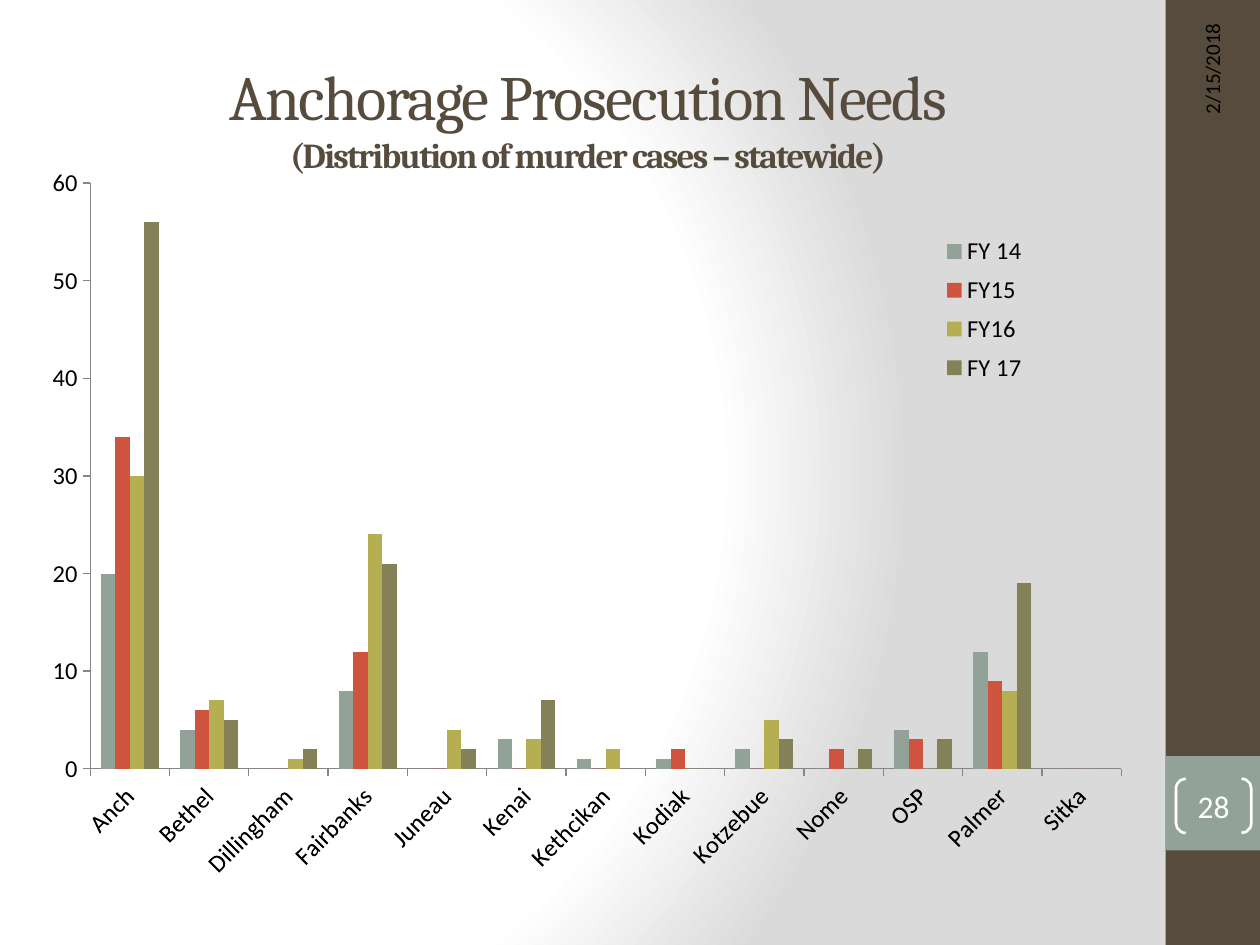
import pptx
import pptx.chart.data
import pptx.dml.color
import pptx.enum.chart
import pptx.enum.shapes
import pptx.enum.text
import pptx.oxml
import pptx.oxml.ns
import pptx.util
import lxml.etree

Pt = pptx.util.Pt
RGBColor = pptx.dml.color.RGBColor
Align = pptx.enum.text.PP_ALIGN
Shape = pptx.enum.shapes.MSO_SHAPE
qn = pptx.oxml.ns.qn

BROWN = RGBColor(0x56, 0x4B, 0x3C)
SAGE = RGBColor(0x93, 0xA2, 0x99)
RED = RGBColor(0xCF, 0x54, 0x3F)
OLIVE = RGBColor(0xB5, 0xAE, 0x53)
MOSS = RGBColor(0x84, 0x80, 0x58)
GRAY = RGBColor(0x86, 0x86, 0x86)
WHITE = RGBColor(0xFF, 0xFF, 0xFF)
BLACK = RGBColor(0, 0, 0)

OFFICES = ["Anch", "Bethel", "Dillingham", "Fairbanks", "Juneau", "Kenai", "Kethcikan",
           "Kodiak", "Kotzebue", "Nome", "OSP", "Palmer", "Sitka"]
CASES = [
    ("FY 14", SAGE, [20, 4, 0, 8, 0, 3, 1, 1, 2, 0, 4, 12, 0]),
    ("FY15", RED, [34, 6, 0, 12, 0, 0, 0, 2, 0, 2, 3, 9, 0]),
    ("FY16", OLIVE, [30, 7, 1, 24, 4, 3, 2, 0, 5, 0, 0, 8, 0]),
    ("FY 17", MOSS, [56, 5, 2, 21, 2, 7, 0, 0, 3, 2, 3, 19, 0]),
]

BACKGROUND = """<a:gradFill xmlns:a="http://schemas.openxmlformats.org/drawingml/2006/main" rotWithShape="1">
<a:gsLst><a:gs pos="0"><a:srgbClr val="FFFFFF"/></a:gs><a:gs pos="75000"><a:srgbClr val="FFFFFF"/></a:gs>
<a:gs pos="100000"><a:srgbClr val="DADADA"/></a:gs></a:gsLst>
<a:path path="circle"><a:fillToRect l="20000" t="50000" r="100000" b="50000"/></a:path></a:gradFill>"""


def apply_format(target, values):
    for name, value in values.items():
        setattr(target, name, value)


def format_font(font, color, **values):
    apply_format(font, values)
    font.color.rgb = color


def write_text(shape, lines, color, align, name, inset=None):
    frame = shape.text_frame
    apply_format(frame, {"word_wrap": True, "vertical_anchor": pptx.enum.text.MSO_ANCHOR.MIDDLE})
    if inset is not None:
        apply_format(frame, dict.fromkeys(
            ["margin_left", "margin_top", "margin_right", "margin_bottom"], inset))
    paragraph = frame.paragraphs[0]
    paragraph.alignment = align
    for index, (text, size, bold, spacing) in enumerate(lines):
        if index:
            paragraph.add_line_break()
        run = paragraph.add_run()
        run.text = text
        format_font(run.font, color, name=name, size=Pt(size), bold=bold)
        run.font._element.set("spc", str(spacing))


def add_panel(slide, left, top, width, height, color):
    panel = slide.shapes.add_shape(Shape.RECTANGLE, Pt(left), Pt(top), Pt(width), Pt(height))
    panel.shadow.inherit = False
    panel.fill.solid()
    panel.fill.fore_color.rgb = color
    panel.line.fill.background()


def add_background(slide):
    slide.background.fill.solid()
    solid = slide.element.find(".//" + qn("p:bgPr")).find(qn("a:solidFill"))
    solid.getparent().replace(solid, pptx.oxml.parse_xml(BACKGROUND))


def add_title(slide, left, top, width, height):
    title = slide.shapes.add_textbox(Pt(left), Pt(top), Pt(width), Pt(height))
    lines = [("Anchorage Prosecution Needs", 36, False, -100),
             ("(Distribution of murder cases – statewide)", 20, True, -100)]
    write_text(title, lines, BROWN, Align.CENTER, "Cambria")


def add_sidebar(slide, left, top, width, height):
    add_panel(slide, left, top, width, height, BROWN)
    badge_top = top + 0.8 * height
    add_panel(slide, left, badge_top, width, width, SAGE)
    number = slide.shapes.add_shape(
        Shape.DOUBLE_BRACKET, Pt(left + 6), Pt(badge_top + 13), Pt(43), Pt(31))
    number.shadow.inherit = False
    number.adjustments[0] = 0.18
    number.fill.background()
    number.line.color.rgb = WHITE
    number.line.width = Pt(1.5)
    write_text(number, [("28", 18, False, 0)], WHITE, Align.CENTER, "Calibri", 0)
    length, thickness = 192, 29
    center_x, center_y = left + 26.4, top + 102.4
    date = slide.shapes.add_textbox(Pt(center_x - length / 2), Pt(center_y - thickness / 2),
                                    Pt(length), Pt(thickness))
    date.rotation = 270
    write_text(date, [("2/15/2018", 12, False, 0)], BLACK, Align.RIGHT, "Calibri")


def add_layout(parent, left, top, width, height, inner=False):
    for old in parent.findall(qn("c:layout")):
        parent.remove(old)
    layout = lxml.etree.Element(qn("c:layout"))
    manual = lxml.etree.SubElement(layout, qn("c:manualLayout"))
    values = {"layoutTarget": "inner"} if inner else {}
    values.update(xMode="edge", yMode="edge", x=left, y=top, w=width, h=height)
    for name, value in values.items():
        lxml.etree.SubElement(manual, qn("c:" + name)).set("val", str(value))
    parent.insert(0 if inner else 1, layout)


def add_case_chart(slide, left, top, width, height):
    data = pptx.chart.data.CategoryChartData()
    data.categories = OFFICES
    for name, color, values in CASES:
        data.add_series(name, values)
    chart = slide.shapes.add_chart(
        pptx.enum.chart.XL_CHART_TYPE.COLUMN_CLUSTERED,
        Pt(left), Pt(top), Pt(width), Pt(height), data).chart
    apply_format(chart, {"has_title": False, "has_legend": True})
    format_font(chart.font, BLACK, name="Calibri", size=Pt(14))
    plot = chart.plots[0]
    apply_format(plot, {"gap_width": 150, "overlap": 0, "vary_by_categories": False})
    for series, (name, color, values) in zip(plot.series, CASES):
        series.format.fill.solid()
        series.format.fill.fore_color.rgb = color
    apply_format(chart.value_axis, {"minimum_scale": 0, "maximum_scale": 60, "major_unit": 10})
    for axis in (chart.category_axis, chart.value_axis):
        apply_format(axis, {"has_major_gridlines": False,
                            "major_tick_mark": pptx.enum.chart.XL_TICK_MARK.OUTSIDE})
        axis.format.line.color.rgb = GRAY
        format_font(axis.tick_labels.font, BLACK, name="Calibri", size=Pt(14))
    body = chart.category_axis._element.find(qn("c:txPr")).find(qn("a:bodyPr"))
    body.set("rot", "-2700000")
    legend = chart.legend
    apply_format(legend, {"position": pptx.enum.chart.XL_LEGEND_POSITION.RIGHT,
                          "include_in_layout": False})
    format_font(legend.font, BLACK, name="Calibri", size=Pt(14))
    add_layout(legend._element, 0.81, 0.08, 0.12, 0.23)
    plot_area = chart._chartSpace.find(".//" + qn("c:plotArea"))
    add_layout(plot_area, 0.034, 0.017, 0.964, 0.824, True)


def main():
    presentation = pptx.Presentation()
    apply_format(presentation, {"slide_width": Pt(720), "slide_height": Pt(540)})
    slide = presentation.slides.add_slide(presentation.slide_layouts[6])
    add_background(slide)
    add_sidebar(slide, 666, 0, 54, 540)
    add_title(slide, 36, 21.6, 600, 90)
    add_case_chart(slide, 30, 96, 612, 408)
    presentation.save("out.pptx")


if __name__ == "__main__":
    main()
